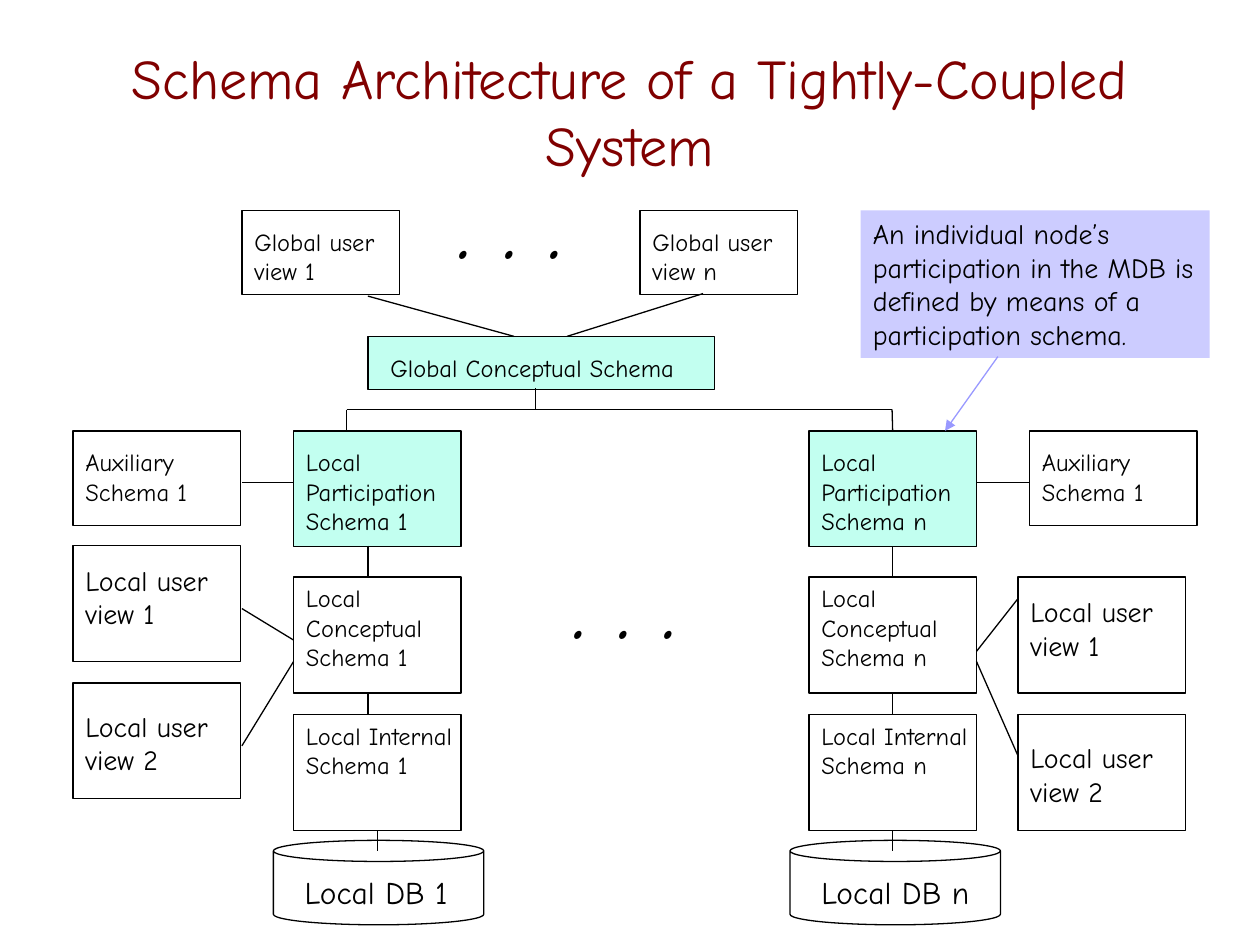
"""Build the schema architecture slide for a tightly-coupled system."""
from dataclasses import dataclass
from typing import NamedTuple, Optional

from lxml.etree import SubElement
from pptx import Presentation
from pptx.dml.color import RGBColor
from pptx.enum.shapes import MSO_CONNECTOR as Connector, MSO_SHAPE as Preset
from pptx.enum.text import MSO_ANCHOR as Anchor, MSO_AUTO_SIZE as AutoSize, PP_ALIGN as Align
from pptx.oxml.ns import qn
from pptx.util import Inches, Pt

COLORS = {"ink": "000000", "title": "800000", "mint": "C2FFF0",
          "note": "CCCCFF", "arrow": "9999FF"}
FONT = "Comic Neue"
TOP, BOTTOM = 0, 2
CORE_WIDTH, CORE_HEIGHT = 1.33, 0.92


class Frame(NamedTuple):
    left: float
    top: float
    width: float
    height: float

    def lengths(self) -> list:
        return [Inches(value) for value in self]


class Link(NamedTuple):
    x1: float
    y1: float
    x2: float
    y2: float


@dataclass
class Node:
    text: str
    frame: Frame
    drop: float = 0.08
    size: int = 14
    extra: float = 0.09
    fill: Optional[str] = None


@dataclass
class Side:
    suffix: str
    core_left: float
    auxiliary_left: float
    view_left: float
    view_tops: tuple
    can_left: float
    spine: float
    links: tuple


SIDES = (
    Side("1", 2.33, 0.58, 0.58, (4.33, 5.42), 2.17, 2.92,
         (Link(2.33, 5.08, 1.92, 4.83), Link(2.33, 5.25, 1.92, 5.92),
          Link(1.92, 3.83, 2.33, 3.83))),
    Side("n", 6.42, 8.17, 8.08, (4.58, 5.67), 6.27, 7.08,
         (Link(7.75, 5.17, 8.08, 4.75), Link(7.75, 5.25, 8.08, 6),
          Link(7.75, 3.83, 8.17, 3.83))),
)
GLOBAL_LINKS = (Link(4.08, 2.67, 2.92, 2.35), Link(4.5, 2.67, 5.58, 2.33),
                Link(4.25, 3.08, 4.25, 3.25), Link(2.75, 3.25, 7.08, 3.25),
                Link(2.75, 3.25, 2.75, 3.42))


def rgb(name: str) -> RGBColor:
    return RGBColor.from_string(COLORS[name])


def write(shape, text: str, size: int, color: str = "ink", align=Align.LEFT,
          anchor=Anchor.TOP, wrap: bool = True, italic: bool = False) -> None:
    frame = shape.text_frame
    for key, value in {"word_wrap": wrap, "auto_size": AutoSize.NONE,
                       "vertical_anchor": anchor}.items():
        setattr(frame, key, value)
    para = frame.paragraphs[0]
    para.alignment = align
    span = para.add_run()
    span.text = text
    for key, value in {"name": FONT, "size": Pt(size), "italic": italic}.items():
        setattr(span.font, key, value)
    span.font.color.rgb = rgb(color)


def add_label(page, text: str, frame: Frame, size: int, **style) -> None:
    write(page.shapes.add_textbox(*frame.lengths()), text, size, **style)


def add_box(page, frame: Frame, fill: Optional[str] = None,
            preset=Preset.RECTANGLE, outlined: bool = True):
    box = page.shapes.add_shape(preset, *frame.lengths())
    box.shadow.inherit = False
    if fill:
        box.fill.solid()
        box.fill.fore_color.rgb = rgb(fill)
    else:
        box.fill.background()
    if outlined:
        box.line.color.rgb = rgb("ink")
        box.line.width = Pt(0.75)
    else:
        box.line.fill.background()
    return box


def add_node(page, node: Node):
    box = add_box(page, node.frame, node.fill)
    left, top, width, height = node.frame
    add_label(page, node.text,
              Frame(left, top + node.drop, width + node.extra, height - node.drop), node.size)
    return box


def add_link(page, link: Link, color: str = "ink", arrow: bool = False,
             start=None, end=None) -> None:
    line = page.shapes.add_connector(Connector.STRAIGHT, *[Inches(value) for value in link])
    line.line.color.rgb = rgb(color)
    line.line.width = Pt(0.75)
    if arrow:
        SubElement(line.line._get_or_add_ln(), qn("a:tailEnd"), type="triangle")
    SubElement(line._element.spPr, qn("a:effectLst"))
    if start is not None:
        line.begin_connect(start, BOTTOM)
    if end is not None:
        line.end_connect(end, TOP)


def add_side(page, side: Side) -> None:
    core = [
        add_node(page, Node(f"Local {name} Schema {side.suffix}",
                            Frame(side.core_left, top, CORE_WIDTH, CORE_HEIGHT),
                            drop=drop, fill=fill))
        for name, top, drop, fill in (("Participation", 3.42, 0.08, "mint"),
                                      ("Conceptual", 4.58, 0, None),
                                      ("Internal", 5.67, 0, None))
    ]
    add_node(page, Node("Auxiliary Schema 1", Frame(side.auxiliary_left, 3.42, CORE_WIDTH, 0.75)))
    for number, (top, drop) in enumerate(zip(side.view_tops, (0.09, 0.16)), 1):
        add_node(page, Node(f"Local user view {number}",
                            Frame(side.view_left, top, CORE_WIDTH, CORE_HEIGHT),
                            drop=drop, size=16, extra=0))
    add_box(page, Frame(side.can_left, 6.67, 1.67, 0.67), preset=Preset.CAN)
    add_label(page, f"Local DB {side.suffix}", Frame(side.can_left + 0.15, 6.88, 1.4, 0.4),
              18, wrap=False)
    for link in side.links:
        add_link(page, link)

    centered = side.spine == 7.08
    for upper, lower, y1, y2 in ((core[0], core[1], 4.33, 4.58),
                                 (core[1], core[2], 5.5, 5.67)):
        ends = {"start": upper, "end": lower} if centered else {}
        add_link(page, Link(side.spine, y1, side.spine, y2), **ends)
    middle = side.core_left + CORE_WIDTH / 2
    add_link(page, Link(middle, 6.59, middle, 6.75), start=core[2])
    if centered:
        add_link(page, Link(side.spine, 3.25, side.spine, 3.42), end=core[0])


def add_global_level(page) -> None:
    for suffix, left in (("1", 1.92), ("n", 5.08)):
        add_node(page, Node(f"Global user view {suffix}", Frame(left, 1.67, 1.25, 0.67)))
    add_box(page, Frame(2.92, 2.67, 2.75, 0.42), "mint")
    add_label(page, "Global Conceptual Schema", Frame(3, 2.75, 2.55, 0.33), 14, wrap=False)
    for link in GLOBAL_LINKS:
        add_link(page, link)


def main() -> None:
    deck = Presentation()
    deck.slide_width, deck.slide_height = Inches(10), Inches(7.5)
    page = deck.slides.add_slide(deck.slide_layouts[5])

    title = page.shapes.title
    bounds = Frame(0.75, 0.25, 8.5, 1.25).lengths()
    for key, value in zip(("left", "top", "width", "height"), bounds):
        setattr(title, key, value)
    write(title, "Schema Architecture of a Tightly-Coupled System", 32, "title",
          Align.CENTER, Anchor.MIDDLE)

    for side in SIDES:
        add_side(page, side)
    add_global_level(page)

    note = add_box(page, Frame(6.83, 1.67, 2.77, 1.17), "note", outlined=False)
    write(note, "An individual node’s participation in the MDB is defined by means of "
                "a participation schema.", 16)
    add_link(page, Link(7.92, 2.83, 7.5, 3.42), "arrow", arrow=True)
    for left, top in ((4.47, 4.28), (3.56, 1.26)):
        add_label(page, ". . .", Frame(left, top, 1.22, 1.01), 54, wrap=False, italic=True)
    deck.save("out.pptx")


if __name__ == "__main__":
    main()
